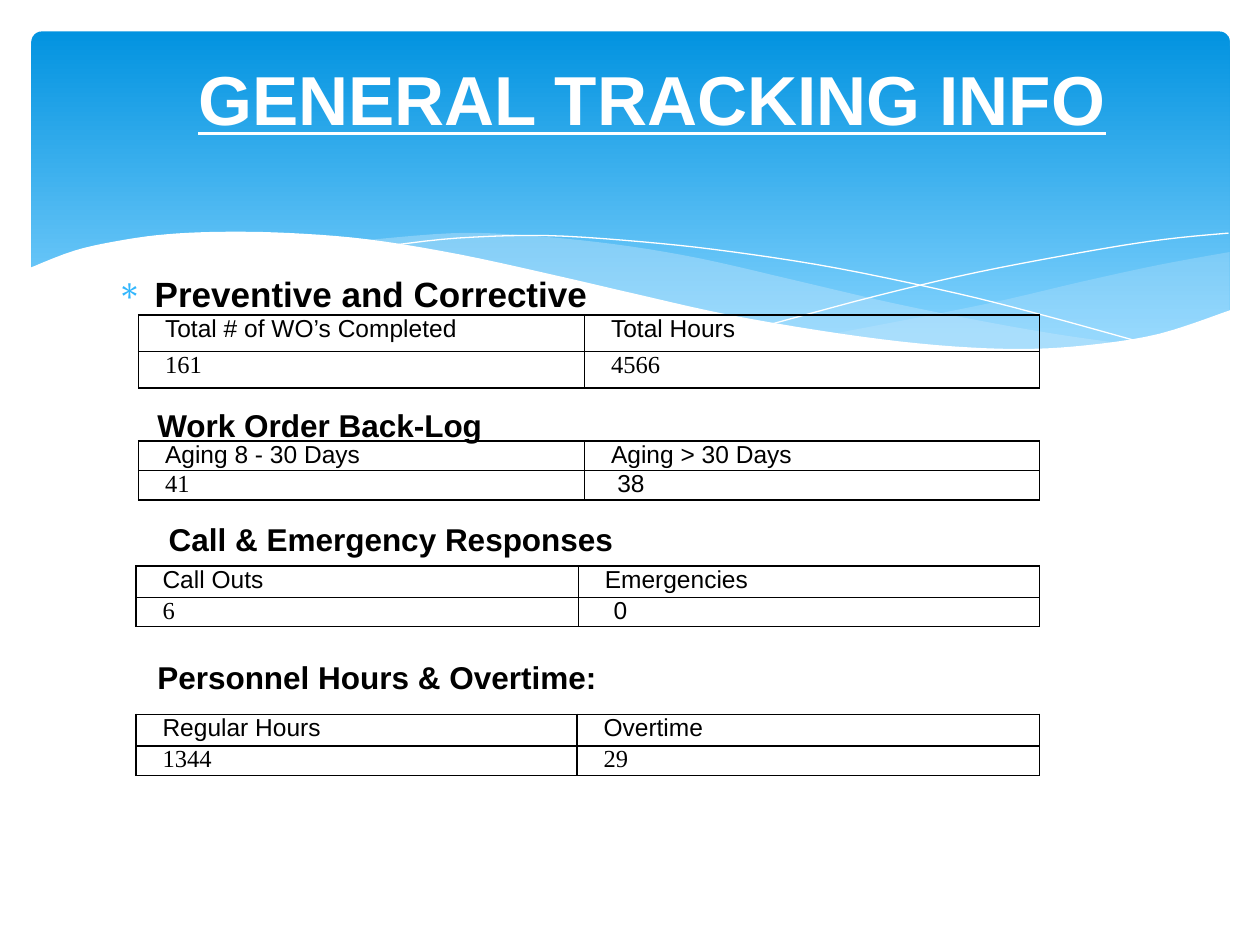
from dataclasses import dataclass

from lxml import etree
from pptx import Presentation
from pptx.dml.color import RGBColor
from pptx.enum.shapes import MSO_SHAPE
from pptx.enum.text import MSO_ANCHOR, PP_ALIGN
from pptx.oxml.ns import qn
from pptx.util import Emu, Inches, Pt

ROUND_RECTANGLE = MSO_SHAPE.ROUNDED_RECTANGLE
TOP = MSO_ANCHOR.TOP
LEFT, CENTER = PP_ALIGN.LEFT, PP_ALIGN.CENTER

# The page is a grid of 100 columns by 75 rows; all positions count its square units.
COLUMNS = 100
PAGE_WIDTH, PAGE_HEIGHT = Inches(10), Inches(7.5)
UNIT = PAGE_WIDTH // COLUMNS
CELL_MARGIN, CELL_INDENT = 0.7, 1.4
TABLE_RIGHT = 82.5


@dataclass(frozen=True)
class Theme:
    sky_top: str = "0293E0"
    sky_bottom: str = "83D3FE"
    wave: str = "C6E7FC"
    bullet: str = "31B6FD"
    paper: str = "FFFFFF"
    ink: str = "000000"
    sans: str = "Arial"
    serif: str = "Times New Roman"
    title_size: float = 39.6
    lead_size: float = 20
    heading_size: float = 18
    cell_size: float = 14


@dataclass(frozen=True)
class Value:
    text: str
    font: str
    indent: float = CELL_INDENT


@dataclass(frozen=True)
class Heading:
    text: str
    left: float
    top: float
    width: float
    indent: float = 0


@dataclass(frozen=True)
class Section:
    left: float
    top: float
    first_column: float
    rows: tuple[float, float]
    labels: tuple[str, str]
    values: tuple[Value, Value]


@dataclass(frozen=True)
class Wave:
    """Smooth edges drawn end to end; filled if closed, otherwise a hairline."""
    edges: tuple
    color: str
    opacity: int = 100
    closed: bool = True


THEME = Theme()

WAVES = (
    Wave((((97.6, 20), (92.1, 21), (86.1, 22.3), (77.9, 24.2), (66.1, 26.5)),
          ((66.1, 26.5), (73.2, 27.4), (80.3, 27.8), (87.2, 27.4), (92.8, 26.3), (97.6, 24.7))),
         THEME.wave, 29),
    Wave((((89.3, 27.3), (83.7, 26.5), (77.5, 25.4), (70.6, 24), (62.9, 22.2), (55.5, 20.5),
           (48.9, 19.4), (42, 18.7), (36.1, 18.5), (28.6, 19.1)),
          ((28.6, 19.1), (36.2, 20.3), (44.9, 22.2), (53, 24), (61.8, 25.8), (69.5, 27),
           (76.1, 27.7), (82.8, 27.8), (89.3, 27.3))),
         THEME.wave, 40),
    Wave((((30.9, 19.5), (36.3, 18.9), (43.3, 18.7), (51, 19.2), (58.2, 20), (66.5, 21.3),
           (76, 23.3), (83.1, 25.1), (90.7, 27.2)),),
         THEME.paper, closed=False),
    Wave((((61.3, 25.7), (69.5, 23.5), (77.6, 21.6), (86.6, 19.9), (92.4, 19), (97.5, 18.5)),),
         THEME.paper, closed=False),
    Wave((((97.7, 24.6), (92, 26.5), (86.3, 27.4), (80.9, 27.7), (74.4, 27.4), (66.8, 26.5),
           (57.9, 25), (50.3, 23.3), (44.7, 22), (36.5, 20.2), (29.2, 19), (23, 18.5),
           (17.7, 18.4), (13.2, 18.6), (9.5, 19.1), (5.9, 19.9), (2.3, 21.3)),
          ((2.3, 32.9), (97.7, 32.9))),
         THEME.paper),
)

HEADINGS = (
    Heading("Work Order Back-Log", 11.5, 31.7, 28.1),
    Heading("Call & Emergency Responses", 11, 40.8, 39, CELL_INDENT),
    Heading("Personnel Hours & Overtime:", 11.5, 51.7, 37.9),
)

SECTIONS = (
    Section(11, 25, 35.4, (2.9, 2.9), ("Total # of WO’s Completed", "Total Hours"),
            (Value("161", THEME.serif), Value("4566", THEME.serif))),
    Section(11, 35, 35.4, (2.3, 2.3), ("Aging 8 - 30 Days", "Aging > 30 Days"),
            (Value("41", THEME.serif), Value("38", THEME.sans, 1.9))),
    Section(10.8, 44.9, 35.1, (2.5, 2.3), ("Call Outs", "Emergencies"),
            (Value("6", THEME.serif), Value("0", THEME.sans, 2.1))),
    Section(10.8, 56.7, 35, (2.5, 2.3), ("Regular Hours", "Overtime"),
            (Value("1344", THEME.serif), Value("29", THEME.serif))),
)


def units(count: float) -> Emu:
    return Emu(round(count * UNIT))


def add_span(para, text: str, size: float, font: str, color: str, bold: bool = False):
    span = para.add_run()
    span.text = text
    span.font.size, span.font.name, span.font.bold = Pt(size), font, bold
    span.font.color.rgb = RGBColor.from_string(color)
    return span


def indent_para(para, margin: float, first_line: float = 0) -> None:
    properties = para._p.get_or_add_pPr()
    properties.set("marL", str(units(margin)))
    properties.set("indent", str(units(first_line)))


def add_box(page, left: float, top: float, width: float, height: float, wrap: bool = True):
    box = page.shapes.add_textbox(*map(units, (left, top, width, height)))
    box.text_frame.word_wrap = wrap
    box.text_frame.vertical_anchor = TOP
    return box.text_frame


def smooth(knots: tuple, steps: int = 5) -> list[tuple[int, int]]:
    """Sample a Catmull-Rom curve through the knots."""
    padded = (knots[0], *knots, knots[-1])
    points = [knots[0]]
    for before, start, end, after in zip(padded, padded[1:], padded[2:], padded[3:]):
        for step in range(1, steps + 1):
            t = step / steps
            points.append(tuple(
                0.5 * (2 * b + (c - a) * t + (2 * a - 5 * b + 4 * c - d) * t ** 2
                       + (3 * b - a - 3 * c + d) * t ** 3)
                for a, b, c, d in zip(before, start, end, after)))
    return [(units(x), units(y)) for x, y in points]


def draw_wave(group, wave: Wave) -> None:
    points = [point for edge in wave.edges for point in smooth(edge)]
    builder = group.shapes.build_freeform(*points[0], scale=1.0)
    builder.add_line_segments(points[1:], close=wave.closed)
    shape = builder.convert_to_shape()
    shape.shadow.inherit = False
    color = RGBColor.from_string(wave.color)
    if not wave.closed:
        shape.fill.background()
        shape.line.color.rgb, shape.line.width = color, Pt(0)
        return
    shape.line.fill.background()
    shape.fill.solid()
    shape.fill.fore_color.rgb = color
    if wave.opacity < 100:
        paint = shape._element.spPr.find(qn("a:solidFill"))[0]
        etree.SubElement(paint, qn("a:alpha"), val=str(wave.opacity * 1000))


def draw_sky(page) -> None:
    sky = page.shapes.add_shape(ROUND_RECTANGLE, *map(units, (2.5, 2.5, 95.1, 27)))
    sky.adjustments[0] = 0.03
    sky.shadow.inherit = False
    sky.line.fill.background()
    sky.fill.gradient()
    sky.fill.gradient_angle = 270
    stops = ((0, THEME.sky_top), (0.9, THEME.sky_bottom))
    for stop, (position, color) in zip(sky.fill.gradient_stops, stops):
        stop.position, stop.color.rgb = position, RGBColor.from_string(color)


def draw_title(page) -> None:
    frame = add_box(page, 5, 3.7, 90, 13.7)
    frame.margin_top = units(0.8)
    para = frame.paragraphs[0]
    para.alignment = CENTER
    indent_para(para, 3.5)
    span = add_span(para, "GENERAL TRACKING INFO", THEME.title_size, THEME.sans, THEME.paper, True)
    span.font.underline = True


def draw_lead(page) -> None:
    frame = add_box(page, 8.3, 20.8, 81, 4.9)
    frame.margin_top = units(0.8)
    para = frame.paragraphs[0]
    indent_para(para, 3, -3)
    properties = para._p.get_or_add_pPr()
    etree.SubElement(etree.SubElement(properties, qn("a:buClr")), qn("a:srgbClr"), val=THEME.bullet)
    etree.SubElement(properties, qn("a:buChar"), char="∗")
    add_span(para, "Preventive and Corrective", THEME.lead_size, THEME.sans, THEME.ink, True)


def draw_heading(page, heading: Heading) -> None:
    frame = add_box(page, heading.left, heading.top, heading.width, 4, wrap=False)
    para = frame.paragraphs[0]
    para.alignment = LEFT
    indent_para(para, heading.indent)
    add_span(para, heading.text, THEME.heading_size, THEME.sans, THEME.ink, True)


def fill_cell(cell, value: Value) -> None:
    cell.margin_left = cell.margin_right = units(CELL_MARGIN)
    cell.margin_top = cell.margin_bottom = 0
    para = cell.text_frame.paragraphs[0]
    indent_para(para, value.indent)
    add_span(para, value.text, THEME.cell_size, value.font, THEME.ink)
    properties = cell._tc.get_or_add_tcPr()
    for side in ("lnL", "lnR", "lnT", "lnB"):
        border = etree.SubElement(properties, qn(f"a:{side}"), w=str(Pt(1)))
        paint = etree.SubElement(border, qn("a:solidFill"))
        etree.SubElement(paint, qn("a:srgbClr"), val=THEME.ink)
    cell.fill.background()


def draw_section(page, section: Section) -> None:
    width = TABLE_RIGHT - section.left
    area = map(units, (section.left, section.top, width, sum(section.rows)))
    table = page.shapes.add_table(2, 2, *area).table
    table.first_row = table.horz_banding = False
    for column, size in zip(table.columns, (section.first_column, width - section.first_column)):
        column.width = units(size)
    labels = [Value(label, THEME.sans) for label in section.labels]
    for row, height, values in zip(table.rows, section.rows, (labels, section.values)):
        row.height = units(height)
        for cell, value in zip(row.cells, values):
            fill_cell(cell, value)


def main() -> None:
    deck = Presentation()
    deck.slide_width, deck.slide_height = PAGE_WIDTH, PAGE_HEIGHT
    page = deck.slides.add_slide(deck.slide_layouts[6])
    draw_sky(page)
    waves = page.shapes.add_group_shape()
    for wave in WAVES:
        draw_wave(waves, wave)
    draw_lead(page)
    draw_title(page)
    for heading in HEADINGS:
        draw_heading(page, heading)
    for section in SECTIONS:
        draw_section(page, section)
    deck.save("out.pptx")


if __name__ == "__main__":
    main()
